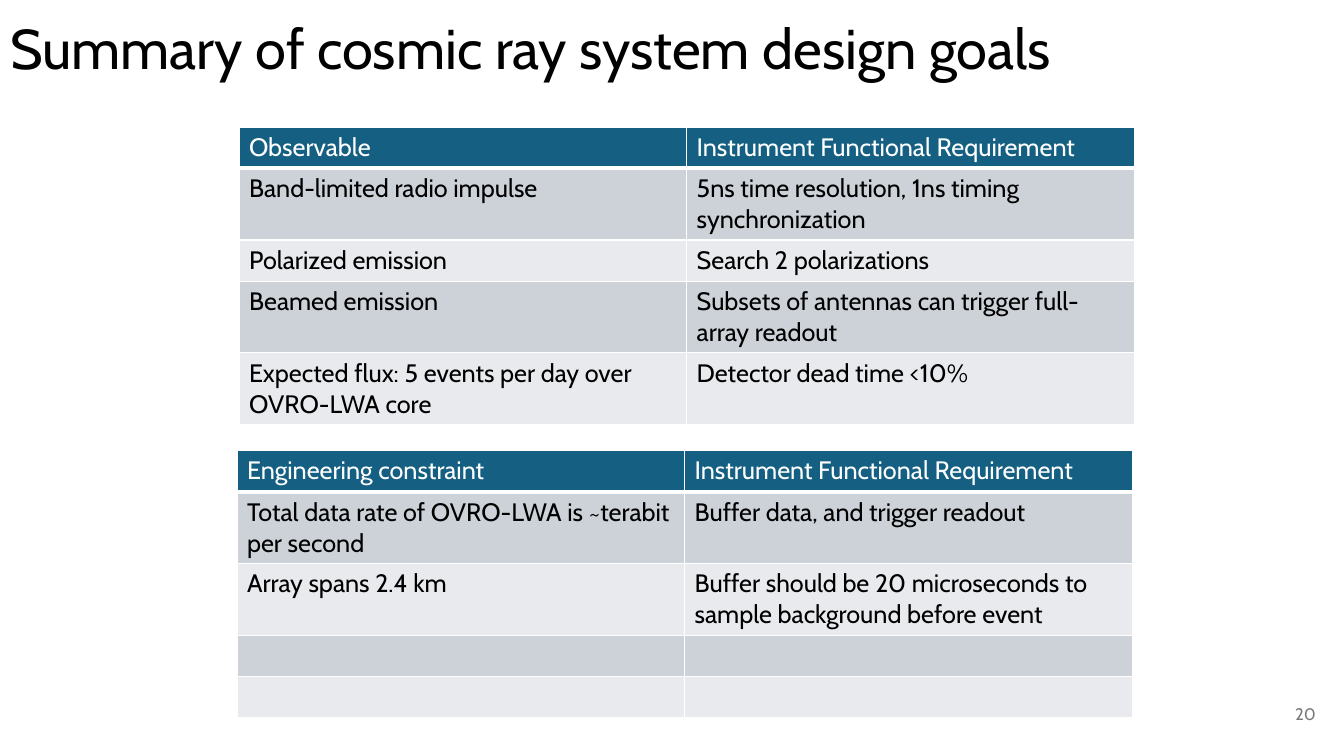
"""Build the slide that sums up the cosmic ray system design goals."""
from dataclasses import dataclass

from lxml import etree
from pptx import Presentation
from pptx.dml.color import RGBColor
from pptx.enum import text as t
from pptx.oxml import ns
from pptx.util import Inches, Pt

FONT = "Cabin"
BLACK, WHITE, GREY = "000000", "FFFFFF", "797979"
HEADER_FILL = "156082"
BAND_FILLS = ("CCD2D8", "E8EAED")
COLUMN_WIDTH = 4.44
SINGLE, DOUBLE = 0.41, 0.71
REQUIREMENT = "Instrument Functional Requirement"


@dataclass(frozen=True)
class GoalRow:
    left: str = ""
    right: str = ""
    height: float = SINGLE


@dataclass(frozen=True)
class GoalTable:
    x: float
    y: float
    rows: tuple[GoalRow, ...]


TABLES = (
    GoalTable(2.37, 1.26, (
        GoalRow("Observable", REQUIREMENT),
        GoalRow("Band-limited radio impulse",
                "5ns time resolution, 1ns timing synchronization", DOUBLE),
        GoalRow("Polarized emission", "Search 2 polarizations"),
        GoalRow("Beamed emission",
                "Subsets of antennas can trigger full-array readout", DOUBLE),
        GoalRow("Expected flux: 5 events per day over OVRO-LWA core",
                "Detector dead time <10%", DOUBLE),
    )),
    GoalTable(2.35, 4.47, (
        GoalRow("Engineering constraint", REQUIREMENT),
        GoalRow("Total data rate of OVRO-LWA is ~terabit per second",
                "Buffer data, and trigger readout", DOUBLE),
        GoalRow("Array spans 2.4 km",
                "Buffer should be 20 microseconds to sample background before event",
                DOUBLE),
        GoalRow(),
        GoalRow(),
    )),
)


def rgb(value: str) -> RGBColor:
    return RGBColor.from_string(value)


def style_text(frame, size: float, color: str) -> None:
    for para in frame.paragraphs:
        for span in para.runs:
            span.font.name = FONT
            span.font.size = Pt(size)
            span.font.bold = False
            span.font.color.rgb = rgb(color)


def set_margins(frame) -> None:
    frame.margin_left = frame.margin_right = Inches(0.1)
    frame.margin_top = frame.margin_bottom = Inches(0.1)


def add_borders(cell, bottom: float) -> None:
    properties = cell._tc.get_or_add_tcPr()
    for side, width in (("L", 1), ("R", 1), ("T", 1), ("B", bottom)):
        line = etree.SubElement(properties, ns.qn(f"a:ln{side}"), w=str(Pt(width)))
        fill = etree.SubElement(line, ns.qn("a:solidFill"))
        etree.SubElement(fill, ns.qn("a:srgbClr"), val=WHITE)


def draw_title(page, wording: str) -> None:
    title = page.shapes.title
    title.left, title.top = Inches(0), Inches(0.11)
    title.width, title.height = Inches(13.21), Inches(0.84)
    frame = title.text_frame
    frame.text = wording
    frame.word_wrap = True
    frame.auto_size = t.MSO_AUTO_SIZE.NONE
    frame.vertical_anchor = t.MSO_ANCHOR.TOP
    set_margins(frame)
    frame.paragraphs[0].alignment = t.PP_ALIGN.LEFT
    frame.paragraphs[0].line_spacing = 0.9
    style_text(frame, 40, BLACK)


def draw_table(page, goals: GoalTable) -> None:
    height = sum(row.height for row in goals.rows)
    table = page.shapes.add_table(
        len(goals.rows), 2, Inches(goals.x), Inches(goals.y),
        Inches(2 * COLUMN_WIDTH), Inches(height)).table
    for column in table.columns:
        column.width = Inches(COLUMN_WIDTH)
    for index, row in enumerate(goals.rows):
        table.rows[index].height = Inches(row.height)
        is_header = index == 0
        fill = HEADER_FILL if is_header else BAND_FILLS[(index - 1) % 2]
        for cell, wording in zip(table.rows[index].cells, (row.left, row.right)):
            add_borders(cell, 3 if is_header else 1)
            cell.fill.solid()
            cell.fill.fore_color.rgb = rgb(fill)
            if wording:
                cell.text_frame.text = wording
                style_text(cell.text_frame, 18, WHITE if is_header else BLACK)


def draw_page_number(page, number: str) -> None:
    box = page.shapes.add_textbox(Inches(12.35), Inches(6.8), Inches(0.8), Inches(0.57))
    frame = box.text_frame
    frame.text = number
    frame.word_wrap = True
    frame.vertical_anchor = t.MSO_ANCHOR.MIDDLE
    set_margins(frame)
    frame.paragraphs[0].alignment = t.PP_ALIGN.RIGHT
    style_text(frame, 12, GREY)


def main() -> None:
    deck = Presentation()
    deck.slide_width, deck.slide_height = Inches(13.33), Inches(7.5)
    page = deck.slides.add_slide(deck.slide_layouts.get_by_name("Title Only"))
    draw_title(page, "Summary of cosmic ray system design goals")
    for goals in TABLES:
        draw_table(page, goals)
    draw_page_number(page, "20")
    deck.save("out.pptx")


if __name__ == "__main__":
    main()
